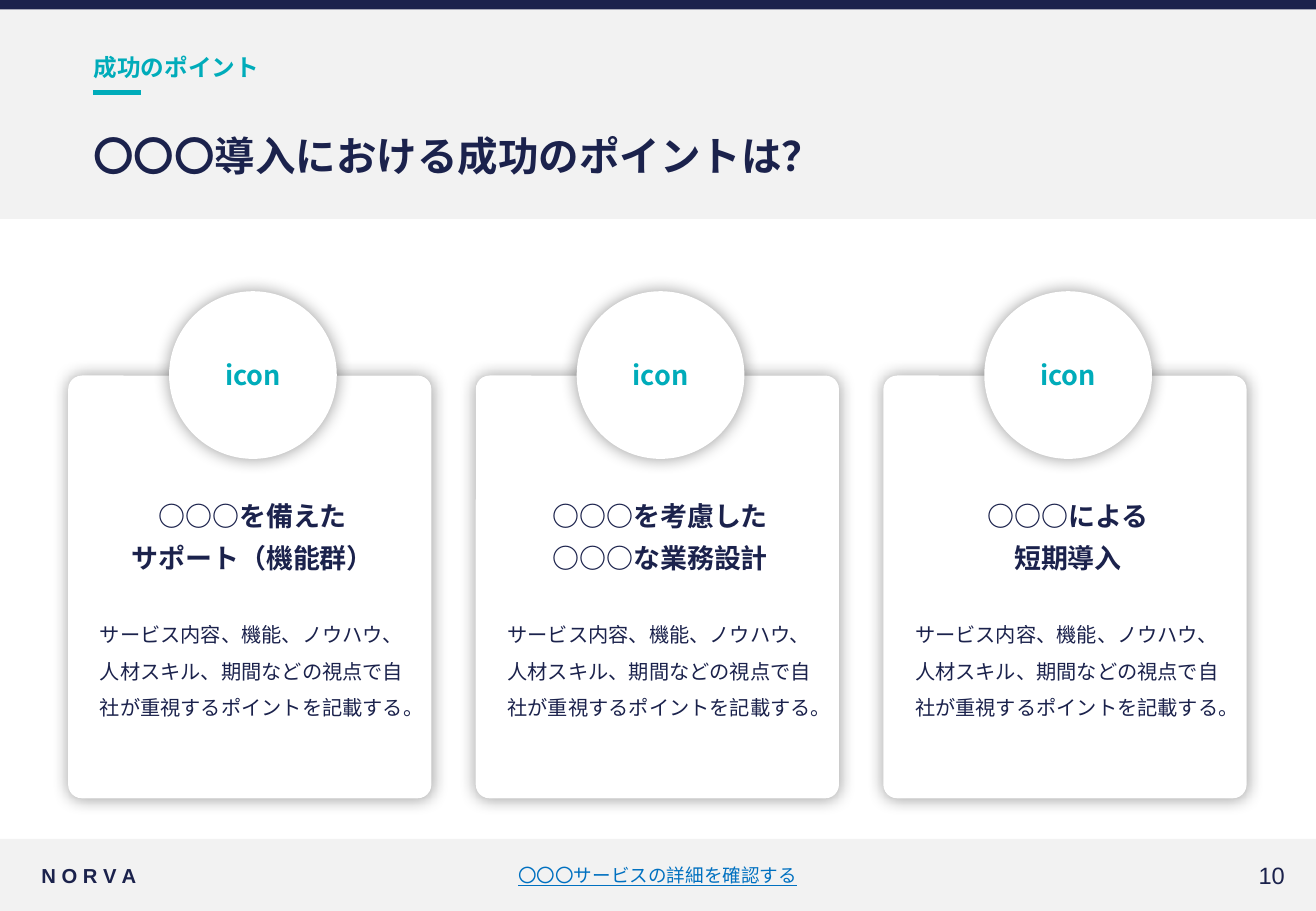
from dataclasses import dataclass

from lxml import etree
from pptx import Presentation
from pptx.dml.color import RGBColor
from pptx.enum.shapes import MSO_CONNECTOR as CONN, MSO_SHAPE as SHAPE
from pptx.enum.text import MSO_ANCHOR as ANCHOR, MSO_AUTO_SIZE as AUTO, PP_ALIGN as ALIGN
from pptx.oxml import parse_xml
from pptx.oxml.ns import nsdecls, qn
from pptx.util import Pt


@dataclass(frozen=True)
class Theme:
    navy: str = "1B224C"
    teal: str = "00ACBA"
    blue: str = "0070C0"
    gray: str = "F2F2F2"
    white: str = "FFFFFF"
    latin: str = "Arial"
    japanese: str = "Noto Sans CJK JP"
    title: int = 24
    heading: int = 16
    label: int = 14
    body: int = 12
    link: int = 11


class Deck:
    """Holds the theme and the current slide."""

    def __init__(self, slide, theme):
        self.s = slide
        self.theme = theme

    def shape(self, kind, x, y, w, h, fill):
        sp = self.s.shapes.add_shape(kind, Pt(x), Pt(y), Pt(w), Pt(h))
        sp.shadow.inherit = False
        sp.fill.solid()
        sp.fill.fore_color.rgb = RGBColor.from_string(fill)
        sp.line.fill.background()
        return sp

    def raised(self, kind, x, y, w, h):
        """White shape with a soft shadow all round."""
        sp = self.shape(kind, x, y, w, h, self.theme.white)
        effects = sp._element.spPr.find(qn("a:effectLst"))
        effects.append(parse_xml(
            f'<a:outerShdw {nsdecls("a")} blurRad="{Pt(10)}" dist="0" algn="ctr" '
            'rotWithShape="0"><a:srgbClr val="000000"><a:alpha val="40000"/>'
            '</a:srgbClr></a:outerShdw>'))
        return sp

    def rule(self, x1, x2, y, color, width):
        ln = self.s.shapes.add_connector(CONN.STRAIGHT, Pt(x1), Pt(y), Pt(x2), Pt(y))
        ln.line.color.rgb = RGBColor.from_string(color)
        ln.line.width = Pt(width)
        etree.SubElement(ln._element.spPr, qn("a:effectLst"))

    def set_text(self, sp, text, size, color, font, bold=False, underline=False,
                 align=ALIGN.LEFT, anchor=ANCHOR.MIDDLE, after=0, spacing=1.0):
        tf = sp.text_frame
        tf.text = text
        tf.word_wrap = True
        tf.auto_size = AUTO.NONE
        tf.vertical_anchor = anchor
        tf.margin_left = tf.margin_right = tf.margin_top = tf.margin_bottom = Pt(3)
        for p in tf.paragraphs:
            p.alignment = align
            p.space_before = Pt(0)
            p.space_after = Pt(after)
            p.line_spacing = spacing
            for r in p.runs:
                r.font.size = Pt(size)
                r.font.bold = bold
                r.font.underline = underline
                r.font.name = font
                r.font.color.rgb = RGBColor.from_string(color)
                east_asian = etree.Element(qn("a:ea"), typeface=self.theme.japanese)
                r.font._element.find(qn("a:latin")).addnext(east_asian)

    def text(self, x, y, w, h, *args, **style):
        sp = self.s.shapes.add_textbox(Pt(x), Pt(y), Pt(w), Pt(h))
        self.set_text(sp, *args, **style)

    def title(self, x, y, w, h, *args, **style):
        sp = self.s.shapes.title
        sp.left, sp.top, sp.width, sp.height = Pt(x), Pt(y), Pt(w), Pt(h)
        self.set_text(sp, *args, **style)
        self.s.shapes._spTree.append(sp._element)  # above the header band

    def card(self, x, y, heading, body):
        t = self.theme
        box = self.raised(SHAPE.ROUNDED_RECTANGLE, x, y, 215.3, 250.6)
        box.adjustments[0] = 0.038
        icon = self.raised(SHAPE.OVAL, x + 59.8, y - 50, 99.4, 99.4)
        self.set_text(icon, "icon", t.heading, t.teal, t.japanese, bold=True,
                      align=ALIGN.CENTER)
        self.text(x + 17.3, y + 67, 184.3, 56.9, heading, t.heading, t.navy,
                  t.japanese, bold=True, align=ALIGN.CENTER, after=6)
        self.text(x + 15.8, y + 136.1, 187.2, 99.4, body, t.body, t.navy, t.latin,
                  anchor=ANCHOR.TOP, after=4.3, spacing=1.5)


def main():
    prs = Presentation()
    prs.slide_width, prs.slide_height = Pt(780), Pt(540)
    t = Theme()
    deck = Deck(prs.slides.add_slide(prs.slide_layouts[5]), t)

    # Header and footer bands
    for y, h, fill in [(497.3, 42.7, t.gray), (0, 129.8, t.gray), (0, 5.6, t.navy)]:
        deck.shape(SHAPE.RECTANGLE, 0, y, 780, h, fill)

    # Section label and title
    deck.rule(55, 83.5, 54.8, t.teal, 2.5)
    deck.text(52.4, 28.6, 674.6, 20.2, "成功のポイント", t.label, t.teal, t.japanese,
              bold=True, anchor=ANCHOR.TOP)
    deck.title(52.4, 70.6, 674.6, 42.5, "〇〇〇導入における成功のポイントは？",
               t.title, t.navy, t.japanese, bold=True)

    # Cards
    headings = ["○○○を備えた\nサポート（機能群）", "○○○を考慮した\n○○○な業務設計",
                "○○○による\n短期導入"]
    body = "サービス内容、機能、ノウハウ、人材スキル、期間などの視点で自社が重視するポイントを記載する。"
    for i, heading in enumerate(headings):
        deck.card(40.4 + i * 241.6, 222.6, heading, body)

    # Footer
    deck.text(21.6, 507.6, 77, 22.3, "N O R V A", t.body, t.navy, t.latin, bold=True)
    deck.text(237.6, 507.6, 304.6, 22.3, "〇〇〇サービスの詳細を確認する", t.link, t.blue,
              t.latin, underline=True, align=ALIGN.CENTER)
    deck.text(687.6, 507.6, 77, 22.3, "10", t.label, t.navy, t.latin, align=ALIGN.RIGHT)

    prs.save("out.pptx")


if __name__ == "__main__":
    main()
